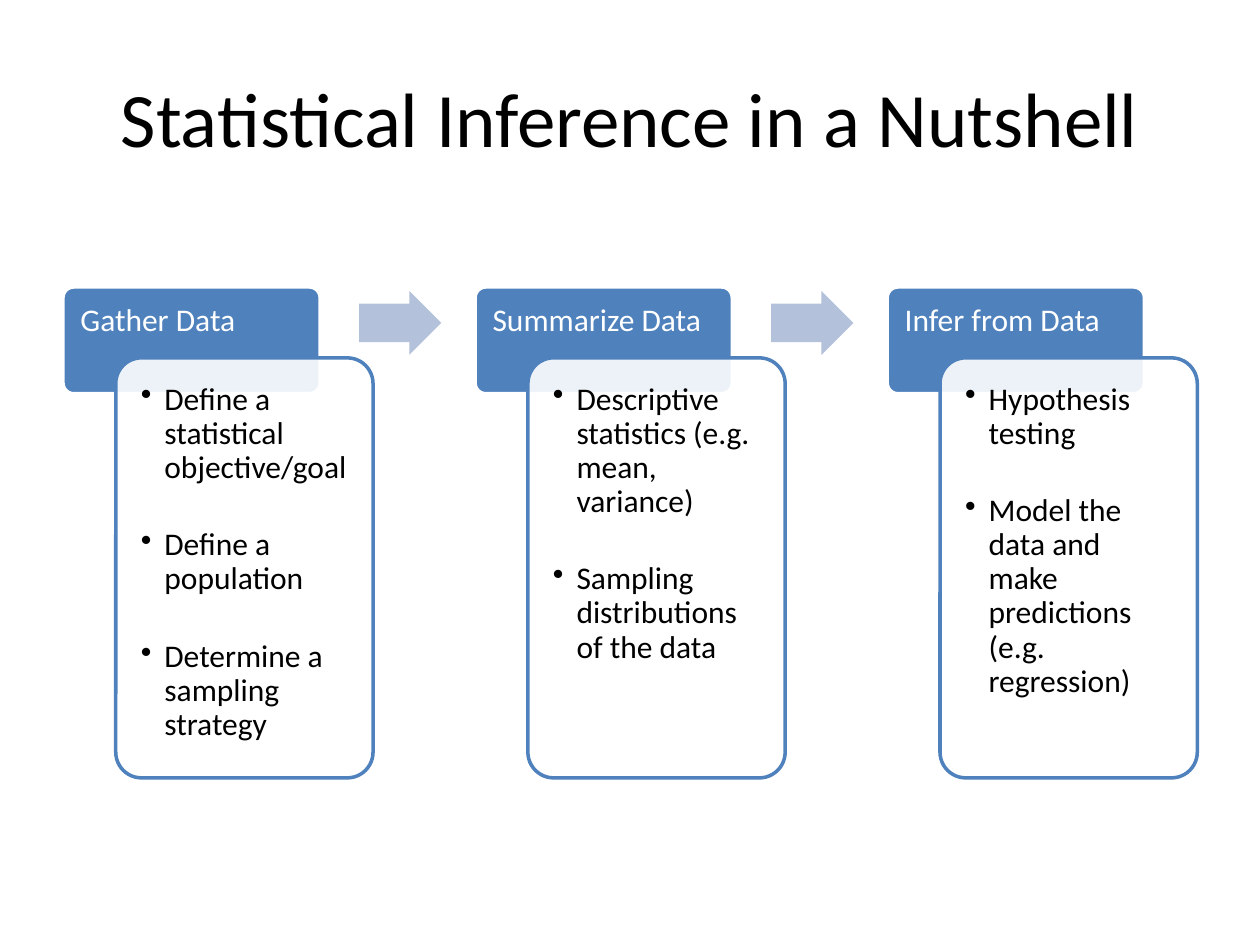
"""Build a slide with three linked steps of statistical inference."""
from dataclasses import dataclass

from lxml.etree import SubElement
from pptx import Presentation
from pptx.dml.color import RGBColor as RGB
from pptx.enum.shapes import MSO_SHAPE as SHAPE
from pptx.enum.text import MSO_ANCHOR as ANCHOR, PP_ALIGN as ALIGN
from pptx.oxml.ns import qn
from pptx.util import Pt


@dataclass(frozen=True)
class Theme:
    font: str = "Calibri"
    title_size: int = 44
    text_size: int = 18
    black: RGB = RGB(0x00, 0x00, 0x00)
    white: RGB = RGB(0xFF, 0xFF, 0xFF)
    blue: RGB = RGB(0x4F, 0x81, 0xBD)
    arrow: RGB = RGB(0xB3, 0xC1, 0xDB)


THEME = Theme()
STEPS = [
    ("Gather Data", ["Define a statistical objective/goal", "Define a population",
                     "Determine a sampling strategy"]),
    ("Summarize Data", ["Descriptive statistics (e.g. mean, variance)",
                        "Sampling distributions of the data"]),
    ("Infer from Data", ["Hypothesis testing",
                         "Model the data and make predictions (e.g. regression)"]),
]
LEFT, PITCH, WIDTH = 36, 235.5, 147


def add_box(s, kind, box, fill, line=None):
    sp = s.shapes.add_shape(kind, *map(Pt, box))
    sp.shadow.inherit = False
    sp.fill.solid()
    sp.fill.fore_color.rgb = fill
    if line is None:
        sp.line.fill.background()
    else:
        sp.line.color.rgb = line
        sp.line.width = Pt(2)
    return sp


def set_text(sp, lines, size, color, insets, align=ALIGN.LEFT, anchor=ANCHOR.TOP, spacing=0.9):
    tf = sp.text_frame
    tf.word_wrap = True
    tf.vertical_anchor = anchor
    tf.margin_left, tf.margin_top, tf.margin_right, tf.margin_bottom = map(Pt, insets)
    tf.text = "\n".join(lines)
    for p in tf.paragraphs:
        p.alignment = align
        p.line_spacing = spacing
        p.font.name, p.font.size = THEME.font, Pt(size)
        p.font.color.rgb = color
    return tf


prs = Presentation()
prs.slide_width, prs.slide_height = Pt(720), Pt(540)
s = prs.slides.add_slide(prs.slide_layouts[6])

title = s.shapes.add_textbox(Pt(36), Pt(21.6), Pt(648), Pt(90))
set_text(title, ["Statistical Inference in a Nutshell"], THEME.title_size, THEME.black,
         (7.2, 3.6, 7.2, 3.6), ALIGN.CENTER, ANCHOR.MIDDLE, 1.0)

for i, (name, points) in enumerate(STEPS):
    x = LEFT + i * PITCH
    header = add_box(s, SHAPE.ROUNDED_RECTANGLE, (x, 164, WIDTH, 61), THEME.blue, THEME.white)
    header.adjustments[0] = 0.1
    set_text(header, [name], THEME.text_size, THEME.white, (8.2, 8.2, 8.2, 5))

    body = add_box(s, SHAPE.ROUNDED_RECTANGLE, (x + 30.2, 204.5, WIDTH, 240),
                   THEME.white, THEME.blue)
    body.adjustments[0] = 0.1
    color = body.fill._xPr.find(qn("a:solidFill"))[0]
    SubElement(color, qn("a:alpha"), val="90000")
    tf = set_text(body, points, THEME.text_size, THEME.black, (10, 10, 9, 10))
    for p in tf.paragraphs:
        p.space_after = Pt(25)
        pPr = p._p.get_or_add_pPr()
        pPr.set("marL", str(Pt(13.5)))
        pPr.set("indent", str(Pt(-13.5)))
        bullet = pPr.makeelement(qn("a:buChar"), {"char": "•"})
        pPr.find(qn("a:defRPr")).addprevious(bullet)

    if i < len(STEPS) - 1:
        arrow = add_box(s, SHAPE.RIGHT_ARROW, (x + 169.2, 166.3, 47, 36.5), THEME.arrow)
        arrow.adjustments[0] = 0.6

prs.save("out.pptx")
